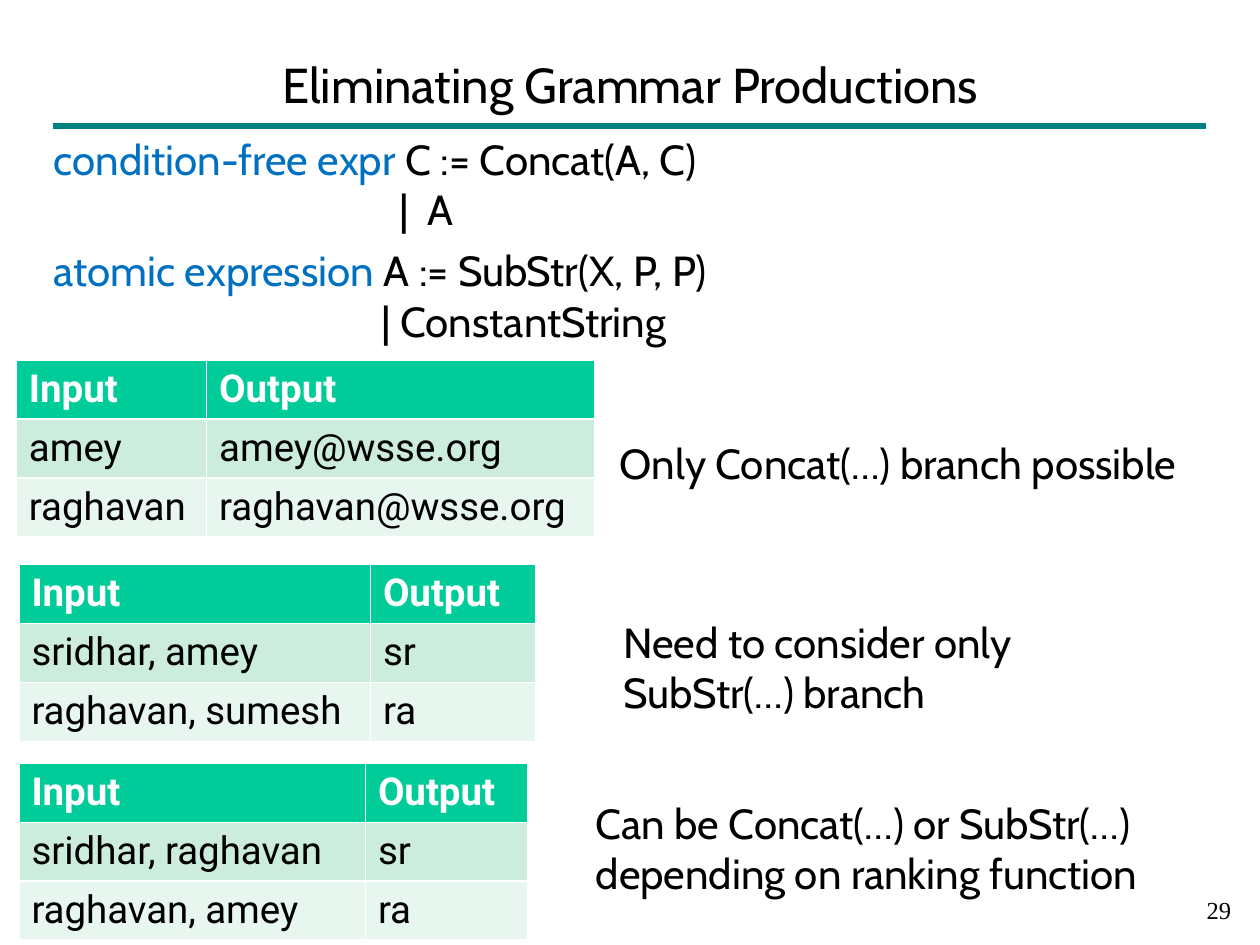
from dataclasses import dataclass

from pptx import Presentation
from pptx import util as u
from pptx.dml.color import RGBColor
from pptx.enum import shapes, text
from pptx.oxml.ns import qn
from lxml import etree


@dataclass(frozen=True)
class Theme:
    prose: str = "Cabin"
    cells: str = "Roboto"
    number: str = "Times New Roman"
    title_size: int = 28
    prose_size: int = 24
    cell_size: int = 22
    number_size: int = 14
    ink: str = "000000"
    white: str = "FFFFFF"
    term: str = "0070C0"
    rule: str = "008080"
    header: str = "00CC99"
    bands: tuple = ("CCECDE", "E7F6EF")


THEME = Theme()
ROW_HEIGHT = 0.455


def inches(*lengths):
    return [u.Inches(length) for length in lengths]


def style(span, font=THEME.prose, size=THEME.prose_size, color=THEME.ink, bold=False):
    span.font.name = font
    span.font.size = u.Pt(size)
    span.font.color.rgb = RGBColor.from_string(color)
    span.font.bold = bold


def place(shape, area):
    shape.left, shape.top, shape.width, shape.height = inches(*area)


def fill_placeholder(shape, area, words, align, **look):
    """Move a template placeholder and give it one plain paragraph."""
    place(shape, area)
    frame = shape.text_frame
    frame.text = words
    frame.auto_size = text.MSO_AUTO_SIZE.NONE
    para = frame.paragraphs[0]
    para.alignment = align
    para.space_before = u.Pt(0)
    props = para._p.get_or_add_pPr()
    props.set("marL", "0")
    props.set("indent", "0")
    etree.SubElement(props, qn("a:buNone"))
    style(para.runs[0], **look)


def add_box(page, area):
    frame = page.shapes.add_textbox(*inches(*area)).text_frame
    frame.word_wrap = True
    return frame


def add_note(page, area, words, align=text.PP_ALIGN.LEFT, **look):
    para = add_box(page, area).paragraphs[0]
    para.text = words
    para.alignment = align
    style(para.runs[0], **look)


def add_grammar(page, area, rules):
    """Each rule: coloured term, first production, alternative and its indent."""
    frame = add_box(page, area)
    for index, (term, production, alternative, indent) in enumerate(rules):
        para = frame.add_paragraph() if index else frame.paragraphs[0]
        para.space_before = u.Pt(6 if index else 0)
        for words, color in ((term + " ", THEME.term), (production, THEME.ink)):
            span = para.add_run()
            span.text = words
            style(span, color=color)
        para = frame.add_paragraph()
        para.text = alternative
        para._p.get_or_add_pPr().set("marL", str(u.Inches(indent)))
        style(para.runs[0])


def add_examples(page, left, top, widths, header_height, examples):
    rows = [("Input", "Output"), *examples]
    heights = [header_height] + [ROW_HEIGHT] * len(examples)
    table = page.shapes.add_table(
        len(rows), len(widths), *inches(left, top, sum(widths), sum(heights))).table
    for column, width in zip(table.columns, widths):
        column.width = u.Inches(width)
    for index, (row, height, values) in enumerate(zip(table.rows, heights, rows)):
        row.height = u.Inches(height)
        is_header = index == 0
        fill = THEME.header if is_header else THEME.bands[(index - 1) % 2]
        for cell, value in zip(row.cells, values):
            cell.text = value
            cell.fill.solid()
            cell.fill.fore_color.rgb = RGBColor.from_string(fill)
            style(cell.text_frame.paragraphs[0].runs[0], THEME.cells, THEME.cell_size,
                  THEME.white if is_header else THEME.ink, is_header)


def add_rule(page, left, right, y):
    line = page.shapes.add_connector(
        shapes.MSO_CONNECTOR.STRAIGHT, *inches(left, y, right, y))
    line.line.color.rgb = RGBColor.from_string(THEME.rule)
    line.line.width = u.Pt(4)
    etree.SubElement(line._element.spPr, qn("a:effectLst"))


def main():
    deck = Presentation()
    deck.slide_width, deck.slide_height = inches(10, 7.5)
    page = deck.slides.add_slide(deck.slide_layouts[1])
    title, body = page.placeholders

    # Heading and grammar
    add_rule(page, 0.42, 9.57, 1)
    fill_placeholder(title, (0.49, 0.33, 9.02, 0.67), "Eliminating Grammar Productions",
                     text.PP_ALIGN.CENTER, size=THEME.title_size)
    title.text_frame.vertical_anchor = text.MSO_ANCHOR.MIDDLE
    add_grammar(page, (0.33, 1.01, 5.8, 1.8), [
        ("condition-free expr", "C := Concat(A, C)", "|  A", 2.74),
        ("atomic expression", "A := SubStr(X, P, P)", "| ConstantString", 2.6),
    ])

    # Example tables
    add_examples(page, 0.13, 2.86, (1.51, 3.08), ROW_HEIGHT,
                 [("amey", "amey@wsse.org"), ("raghavan", "raghavan@wsse.org")])
    add_examples(page, 0.15, 4.48, (2.79, 1.31), 0.47,
                 [("sridhar, amey", "sr"), ("raghavan, sumesh", "ra")])
    add_examples(page, 0.15, 6.06, (2.75, 1.29), ROW_HEIGHT,
                 [("sridhar, raghavan", "sr"), ("raghavan, amey", "ra")])

    # What each table implies
    fill_placeholder(body, (4.82, 3.42, 5.18, 0.69), "Only Concat(…) branch possible",
                     text.PP_ALIGN.LEFT)
    add_note(page, (4.85, 4.84, 3.98, 0.69), "Need to consider only SubStr(…) branch")
    add_note(page, (4.63, 6.28, 4.88, 0.96),
             "Can be Concat(…) or SubStr(…) depending on ranking function")

    # Page number
    add_note(page, (7.79, 7.05, 2.08, 0.42), "29", text.PP_ALIGN.RIGHT,
             font=THEME.number, size=THEME.number_size)
    deck.save("out.pptx")


if __name__ == "__main__":
    main()
